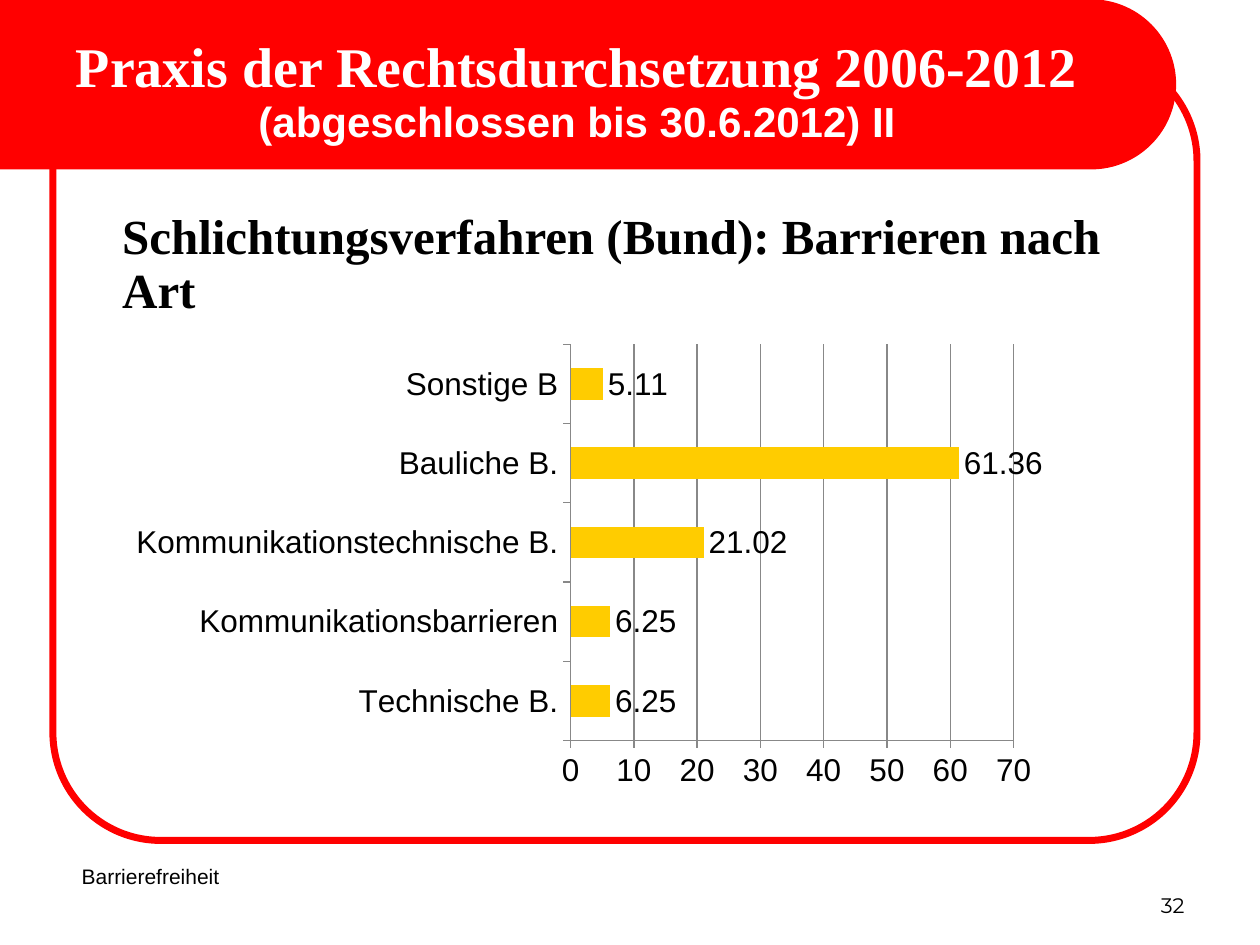
from dataclasses import dataclass
from math import cos, pi, sin

from lxml import etree
from pptx import Presentation
from pptx.chart.data import CategoryChartData
from pptx.dml.color import RGBColor
from pptx.enum.chart import XL_CHART_TYPE, XL_LABEL_POSITION, XL_TICK_MARK
from pptx.enum.shapes import MSO_CONNECTOR, MSO_SHAPE
from pptx.enum.text import MSO_ANCHOR, PP_ALIGN
from pptx.oxml import parse_xml
from pptx.oxml.ns import nsdecls, qn
from pptx.util import Inches, Pt

RED = RGBColor(255, 0, 0)
GOLD = RGBColor(255, 204, 0)
GREY = RGBColor(136, 136, 136)
BLACK = RGBColor(0, 0, 0)
WHITE = RGBColor(255, 255, 255)
BAR = XL_CHART_TYPE.BAR_CLUSTERED
OUT = XL_TICK_MARK.OUTSIDE
END = XL_LABEL_POSITION.OUTSIDE_END
ROUND = MSO_SHAPE.ROUNDED_RECTANGLE
LINE = MSO_CONNECTOR.STRAIGHT
TOP, MIDDLE, BOTTOM = MSO_ANCHOR.TOP, MSO_ANCHOR.MIDDLE, MSO_ANCHOR.BOTTOM
LEFT, CENTER, RIGHT = PP_ALIGN.LEFT, PP_ALIGN.CENTER, PP_ALIGN.RIGHT
SERIF = "Times New Roman"
SANS = "Arial"


@dataclass
class Run:
    text: str
    font: dict


@dataclass
class Box:
    at: tuple
    runs: list
    anchor: int = BOTTOM
    align: int = LEFT
    pads: tuple = (0.1, 0.05, 0.1, 0.05)
    space: float = 1.0


def style(size: int, name: str, color: RGBColor, bold: bool = False) -> dict:
    return {"size": Pt(size), "name": name, "bold": bold, "color": color}


def format_font(font, values: dict) -> None:
    for key, value in values.items():
        if key == "color":
            font.color.rgb = value
        else:
            setattr(font, key, value)


def write(shape, box: Box) -> None:
    for key, value in zip(("left", "top", "width", "height"), box.at):
        setattr(shape, key, Inches(value))
    frame = shape.text_frame
    frame.word_wrap = True
    frame.vertical_anchor = box.anchor
    for key, value in zip(("left", "top", "right", "bottom"), box.pads):
        setattr(frame, f"margin_{key}", Inches(value))
    para = frame.paragraphs[0]
    para.alignment = box.align
    para.line_spacing = box.space
    for item in box.runs:
        run = para.add_run()
        run.text = item.text
        format_font(run.font, item.font)


def draw_frame(shapes) -> None:
    border = shapes.add_shape(ROUND, Inches(0.42), Inches(0.42), Inches(9.08), Inches(6.25))
    border.adjustments[0] = 0.137
    border.fill.background()
    border.line.width = Pt(4)

    rad, mid = Inches(0.67), Inches(8.66)
    steps = 60
    curve = [
        (mid + rad * cos(a), rad + rad * sin(a))
        for a in (-pi / 2 + pi * i / steps for i in range(steps + 1))
    ]
    build = shapes.build_freeform(0, 0)
    build.add_line_segments(curve + [(0, 2 * rad)], close=True)
    band = build.convert_to_shape()
    band.fill.solid()
    band.fill.fore_color.rgb = RED
    band.line.width = Pt(0.75)

    rule = shapes.add_connector(LINE, 0, Inches(1.17), Inches(8.83), Inches(1.17))
    rule.line.width = Pt(3)
    for shape in (border, band, rule):
        shape.line.color.rgb = RED
    etree.SubElement(rule.element.spPr, qn("a:effectLst"))
    for shape in (border, band):
        shape.shadow.inherit = False


def draw_chart(shapes) -> None:
    data = CategoryChartData(number_format="General")
    data.categories = [
        "Technische B.",
        "Kommunikationsbarrieren",
        "Kommunikationstechnische B.",
        "Bauliche B.",
        "Sonstige B",
    ]
    data.add_series("Series 1", (6.25, 6.25, 21.02, 61.36, 5.11))
    chart = shapes.add_chart(
        BAR, Inches(0.94), Inches(2.66), Inches(7.4), Inches(3.67), data
    ).chart
    chart.has_legend = False
    chart.has_title = False
    format_font(chart.font, style(18, SANS, BLACK))

    plot = chart.plots[0]
    plot.vary_by_categories = False
    plot.gap_width = 150
    plot.has_data_labels = True
    labels = plot.data_labels
    labels.show_value = True
    labels.position = END
    fill = plot.series[0].format.fill
    fill.solid()
    fill.fore_color.rgb = GOLD

    cat, val = chart.category_axis, chart.value_axis
    val.minimum_scale, val.maximum_scale, val.major_unit = 0, 70, 10
    val.has_major_gridlines = True
    for axis in (cat, val):
        axis.major_tick_mark = OUT
    for line in (cat.format.line, val.format.line, val.major_gridlines.format.line):
        line.color.rgb = GREY
        line.width = Pt(0.75)

    area = chart.element.chart.plotArea
    for old in area.findall(qn("c:layout")):
        area.remove(old)
    spots = {"x": 0.485, "y": 0.02, "w": 0.475, "h": 0.857}
    parts = "".join(f'<c:{key} val="{value}"/>' for key, value in spots.items())
    area.insert(0, parse_xml(
        f'<c:layout {nsdecls("c")}><c:manualLayout><c:layoutTarget val="inner"/>'
        f'<c:xMode val="edge"/><c:yMode val="edge"/>{parts}'
        "</c:manualLayout></c:layout>"
    ))


def main() -> None:
    deck = Presentation()
    deck.slide_width, deck.slide_height = Inches(10), Inches(7.5)
    slide = deck.slides.add_slide(deck.slide_layouts[5])
    shapes = slide.shapes
    draw_frame(shapes)

    title = shapes.title
    title.element.getparent().append(title.element)
    write(title, Box(
        (0.39, 0.3, 8.38, 0.87),
        [
            Run("Praxis der Rechtsdurchsetzung 2006-2012 ", style(32, SERIF, WHITE, True)),
            Run("(abgeschlossen bis 30.6.2012) II", style(24, SANS, WHITE, True)),
        ],
        MIDDLE, CENTER, (0, 0, 0, 0), 0.93,
    ))
    head = "Schlichtungsverfahren (Bund): Barrieren nach Art"
    boxes = [
        Box((0.59, 1.47, 8.67, 0.88), [Run(head, style(28, SERIF, BLACK, True))],
            TOP, LEFT, (0.38, 0.2, 0, 0), 0.93),
        Box((7.17, 6.83, 2.33, 0.5), [Run("32", style(12, "Montserrat", BLACK))],
            align=RIGHT),
        Box((0.55, 6.64, 2.94, 0.46), [Run("Barrierefreiheit", style(12, SANS, BLACK))]),
    ]
    for box in boxes:
        write(shapes.add_textbox(0, 0, 0, 0), box)
    draw_chart(shapes)
    deck.save("out.pptx")


if __name__ == "__main__":
    main()
